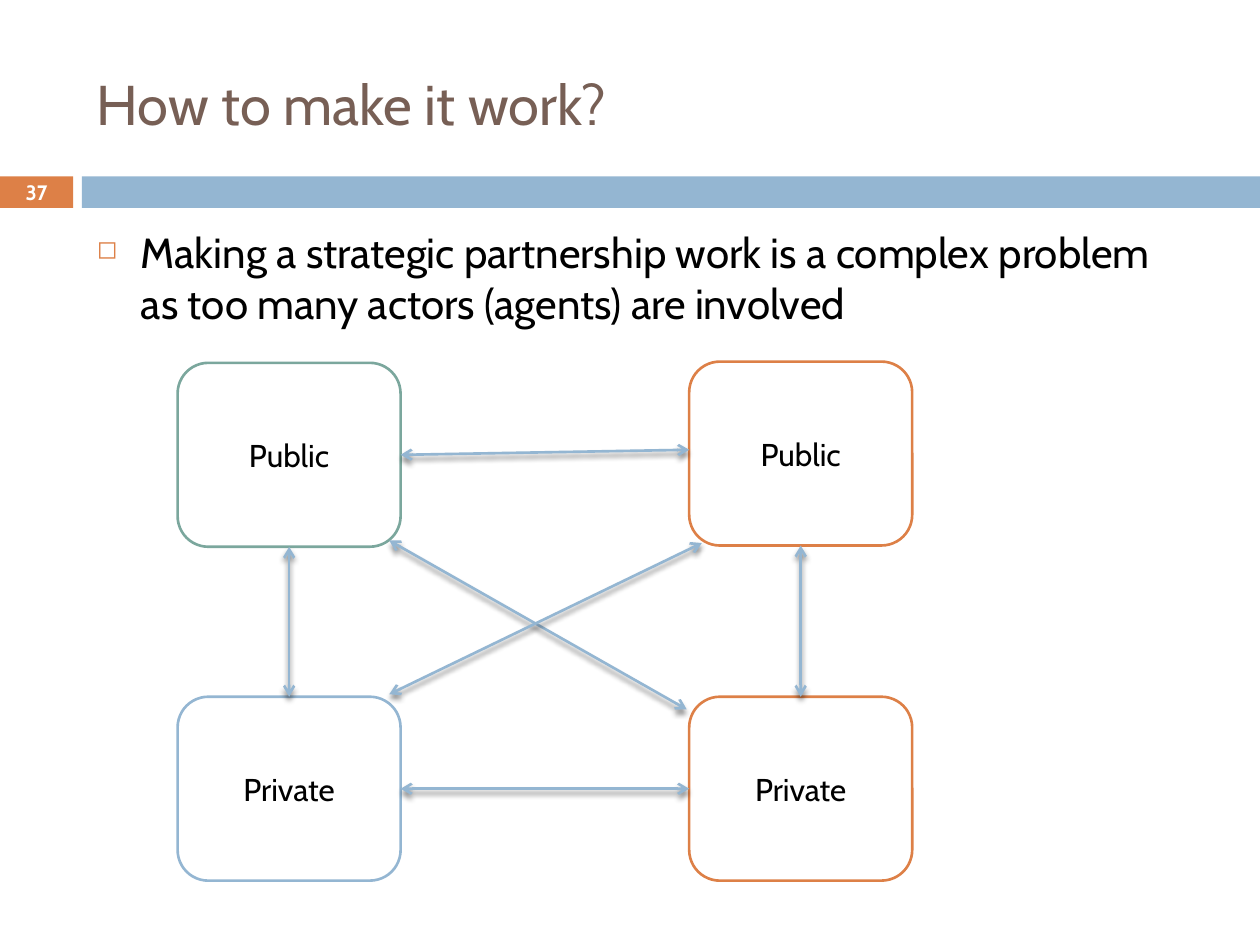
from lxml import etree
from pptx import Presentation
from pptx import util as u
from pptx.dml.color import RGBColor
from pptx.enum import shapes, text
from pptx.oxml import ns

ORANGE = RGBColor(0xDD, 0x80, 0x47)
BLUE = RGBColor(0x94, 0xB6, 0xD2)
GREEN = RGBColor(0x7B, 0xA7, 0x9D)
BROWN = RGBColor(0x77, 0x5F, 0x55)
WHITE = RGBColor(0xFF, 0xFF, 0xFF)
BLACK = RGBColor(0, 0, 0)
TOP, LEFT, BOTTOM, RIGHT = range(4)


def add_xml(parent, tag, **attrs):
    return etree.SubElement(parent, ns.qn(tag), attrs)


class Deck:
    font = "Cabin"
    line_width = u.Pt(1.5)

    def __init__(self, width, height):
        self.prs = Presentation()
        self.prs.slide_width = u.Inches(width)
        self.prs.slide_height = u.Inches(height)
        self.s = self.prs.slides.add_slide(self.prs.slide_layouts[6])

    def fill_text(self, sp, content, size, color, align, anchor, bold=False):
        tf = sp.text_frame
        tf.word_wrap = True
        tf.vertical_anchor = anchor
        tf.text = content
        p = tf.paragraphs[0]
        p.alignment = align
        font = p.runs[0].font
        font.name, font.size, font.bold = self.font, u.Pt(size), bold
        font.color.rgb = color
        return p

    def label(self, box, content, size, color, align=text.PP_ALIGN.LEFT,
              anchor=text.MSO_ANCHOR.MIDDLE, bold=False):
        sp = self.s.shapes.add_textbox(*map(u.Inches, box))
        return self.fill_text(sp, content, size, color, align, anchor, bold)

    def bullet(self, box, content, size, color):
        p = self.label(box, content, size, color, anchor=text.MSO_ANCHOR.TOP)
        p.space_before = u.Pt(7)
        pPr = p._p.get_or_add_pPr()
        pPr.set("marL", str(u.Inches(0.35)))
        pPr.set("indent", str(-u.Inches(0.35)))
        clr = add_xml(pPr, "a:buClr")
        add_xml(clr, "a:srgbClr", val=str(ORANGE))
        add_xml(pPr, "a:buSzPct", val="60000")
        add_xml(pPr, "a:buChar", char="◻")

    def shape(self, kind, box, fill):
        sp = self.s.shapes.add_shape(kind, *map(u.Inches, box))
        sp.shadow.inherit = False
        sp.fill.solid()
        sp.fill.fore_color.rgb = fill
        sp.line.fill.background()
        return sp

    def bar(self, box, fill):
        self.shape(shapes.MSO_SHAPE.RECTANGLE, box, fill)

    def actor(self, box, name, color):
        sp = self.shape(shapes.MSO_SHAPE.ROUNDED_RECTANGLE, box, WHITE)
        sp.line.color.rgb = color
        sp.line.width = self.line_width
        self.fill_text(sp, name, 18, BLACK, text.PP_ALIGN.CENTER,
                       text.MSO_ANCHOR.MIDDLE)
        return sp

    def arrow(self, start=(0, 0), end=(0, 0), begin_at=None, end_at=None):
        c = self.s.shapes.add_connector(
            shapes.MSO_CONNECTOR.STRAIGHT, *map(u.Inches, start + end))
        if begin_at:
            c.begin_connect(*begin_at)
        if end_at:
            c.end_connect(*end_at)
        c.line.color.rgb = BLUE
        c.line.width = self.line_width
        ln = c.line._get_or_add_ln()
        add_xml(ln, "a:headEnd", type="arrow")
        add_xml(ln, "a:tailEnd", type="arrow")
        effects = add_xml(c._element.spPr, "a:effectLst")
        shadow = add_xml(effects, "a:outerShdw", blurRad=str(u.Pt(3)),
                         dist=str(u.Pt(2.4)), dir="5400000", rotWithShape="0")
        clr = add_xml(shadow, "a:srgbClr", val=str(BLACK))
        add_xml(clr, "a:alpha", val="45000")


def main():
    deck = Deck(10, 7.5)
    deck.bar((0, 1.4, 0.58, 0.25), ORANGE)
    deck.bar((0.65, 1.4, 9.35, 0.25), BLUE)
    deck.label((0.67, 0.25, 8.92, 1.14), "How to make it work?", 32, BROWN)
    deck.label((0, 1.39, 0.58, 0.27), "37", 11.9, WHITE,
               text.PP_ALIGN.CENTER, bold=True)
    deck.bullet((0.67, 1.75, 8.92, 5.47),
                "Making a strategic partnership work is a complex problem "
                "as too many actors (agents) are involved", 24, BLACK)

    left, right, lower, size = 1.41, 5.47, 5.53, (1.77, 1.46)
    public_left = deck.actor((left, 2.88) + size, "Public", GREEN)
    public_right = deck.actor((right, 2.87) + size, "Public", ORANGE)
    private_left = deck.actor((left, lower) + size, "Private", BLUE)
    private_right = deck.actor((right, lower) + size, "Private", ORANGE)

    deck.arrow(end=(right, 3.57), begin_at=(public_left, RIGHT))
    for a, a_side, b, b_side in (
        (public_left, BOTTOM, private_left, TOP),
        (public_right, BOTTOM, private_right, TOP),
        (private_left, RIGHT, private_right, LEFT),
    ):
        deck.arrow(begin_at=(a, a_side), end_at=(b, b_side))
    deck.arrow((3.09, 4.29), (5.45, 5.63))
    deck.arrow((3.09, 5.51), (5.57, 4.31))
    deck.prs.save("out.pptx")


if __name__ == "__main__":
    main()
